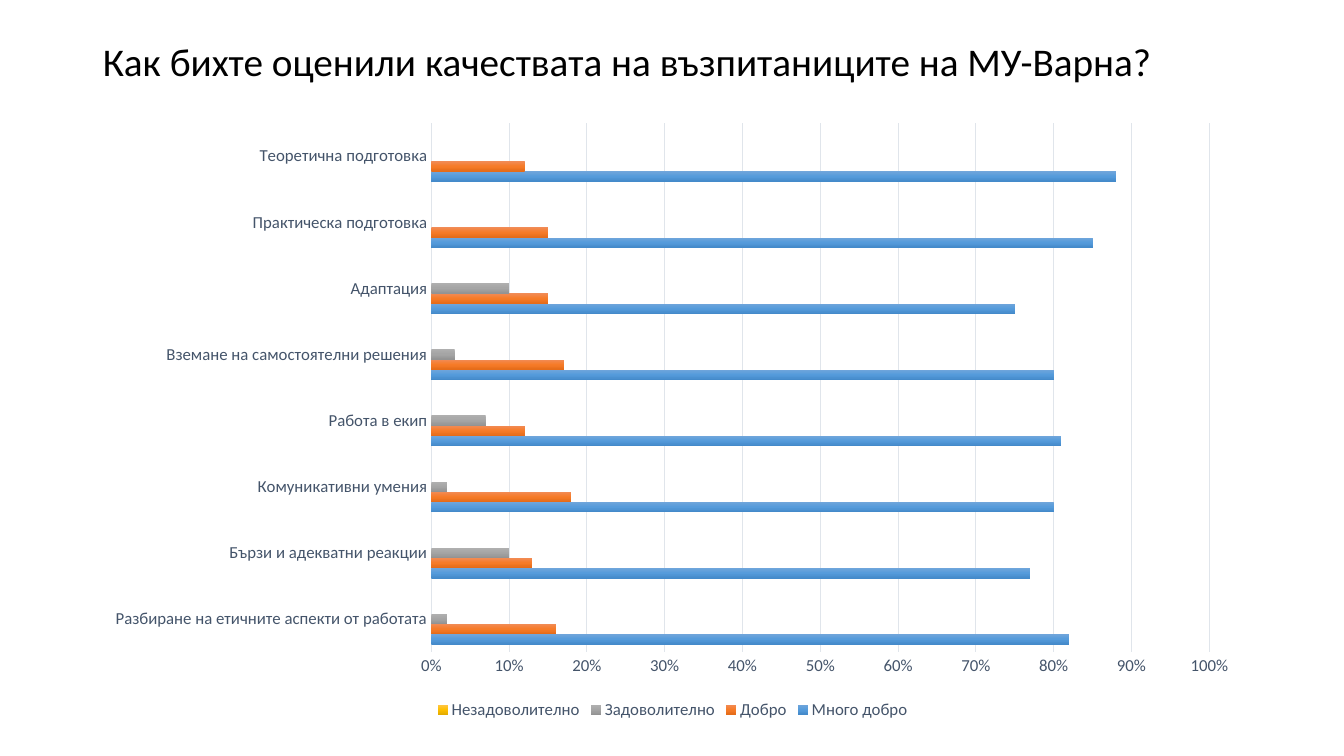
"""Build a slide with a bar chart rating the qualities of graduates."""
from pptx import Presentation
from pptx.chart.data import CategoryChartData
from pptx.dml.color import RGBColor
from pptx.enum.chart import XL_CHART_TYPE, XL_LEGEND_POSITION, XL_TICK_MARK
from pptx.enum.text import MSO_ANCHOR, PP_ALIGN
from pptx.oxml import parse_xml
from pptx.oxml.ns import nsdecls
from pptx.util import Inches, Pt

TITLE = "Как бихте оценили качествата на възпитаниците на МУ-Варна?"
RATINGS = [
    ("Разбиране на етичните аспекти от работата", 0.82, 0.16, 0.02),
    ("Бързи и адекватни реакции", 0.77, 0.13, 0.1),
    ("Комуникативни умения", 0.8, 0.18, 0.02),
    ("Работа в екип", 0.81, 0.12, 0.07),
    ("Вземане на самостоятелни решения", 0.8, 0.17, 0.03),
    ("Адаптация", 0.75, 0.15, 0.1),
    ("Практическа подготовка", 0.85, 0.15, None),
    ("Теоретична подготовка", 0.88, 0.12, None),
]
GRADES = [
    ("Много добро", ("71A6DB", "559BDB", "448ACA")),
    ("Добро", ("F18C57", "F67B28", "E56C19")),
    ("Задоволително", ("AFAFAF", "A5A5A5", "939393")),
    ("Незадоволително", ("FFC64B", "FFC000", "E3AB00")),
    ("", ("6183CB", "3E70CA", "3062BB")),
]
COLORS = {"title": "000000", "label": "44546A", "grid": "E0E5EB"}
FONT = "Calibri"
LEFT, WIDTH = 0.92, 11.5
TITLE_TOP, TITLE_HEIGHT = 0.17, 0.93
CHART_TOP, CHART_HEIGHT = 1.1, 6.08
PLOT = {"x": 4.28 - LEFT, "y": 0.12, "w": 7.72, "h": 5.25}


def set_font(font, size, color):
    for name, value in {"name": FONT, "size": Pt(size), "bold": False}.items():
        setattr(font, name, value)
    font.color.rgb = RGBColor.from_string(COLORS[color])


def set_line(line):
    line.color.rgb = RGBColor.from_string(COLORS["grid"])
    line.width = Pt(0.75)


def add_title(slide):
    sp = slide.shapes.title
    box = {"left": LEFT, "top": TITLE_TOP, "width": WIDTH, "height": TITLE_HEIGHT}
    for name, value in box.items():
        setattr(sp, name, Inches(value))
    tf = sp.text_frame
    tf.text = TITLE
    tf.vertical_anchor = MSO_ANCHOR.MIDDLE
    p = tf.paragraphs[0]
    p.alignment = PP_ALIGN.LEFT
    p.line_spacing = 0.9
    set_font(p.runs[0].font, 28, "title")


def gradient(stops):
    gs = "".join(
        f'<a:gs pos="{i * 50000}"><a:srgbClr val="{c}"/></a:gs>'
        for i, c in enumerate(stops)
    )
    return parse_xml(
        f'<a:gradFill {nsdecls("a")} rotWithShape="1"><a:gsLst>{gs}</a:gsLst>'
        '<a:lin ang="5400000" scaled="0"/></a:gradFill>'
    )


def place_plot(chart):
    modes = '<c:layoutTarget val="inner"/><c:xMode val="edge"/><c:yMode val="edge"/>'
    totals = {"x": WIDTH, "y": CHART_HEIGHT, "w": WIDTH, "h": CHART_HEIGHT}
    parts = "".join(f'<c:{k} val="{v / totals[k]:.3f}"/>' for k, v in PLOT.items())
    layout = parse_xml(
        f'<c:layout {nsdecls("c")}><c:manualLayout>{modes}{parts}'
        "</c:manualLayout></c:layout>"
    )
    chart.element.xpath(".//c:plotArea")[0].insert(0, layout)


def format_axes(chart):
    for axis in (chart.category_axis, chart.value_axis):
        axis.major_tick_mark = axis.minor_tick_mark = XL_TICK_MARK.NONE
        set_font(axis.tick_labels.font, 12, "label")
    set_line(chart.category_axis.format.line)
    axis = chart.value_axis
    for name, value in {"minimum_scale": 0, "maximum_scale": 1, "major_unit": 0.1}.items():
        setattr(axis, name, value)
    axis.format.line.fill.background()
    set_line(axis.major_gridlines.format.line)
    axis.tick_labels.number_format = "0%"
    axis.tick_labels.number_format_is_linked = False


def format_legend(chart):
    chart.has_legend = True
    legend = chart.legend
    legend.position = XL_LEGEND_POSITION.BOTTOM
    legend.include_in_layout = False
    set_font(legend.font, 12, "label")
    entry = parse_xml(
        f'<c:legendEntry {nsdecls("c")}><c:idx val="0"/><c:delete val="1"/></c:legendEntry>'
    )
    chart.element.xpath(".//c:legend/c:legendPos")[0].addnext(entry)


def add_ratings_chart(slide):
    labels, *columns = zip(*RATINGS)
    columns += [(None,) * len(labels)] * (len(GRADES) - len(columns))
    data = CategoryChartData(number_format="0%")
    data.categories = labels
    for (name, _), values in zip(GRADES, columns):
        data.add_series(name, values)
    box = [Inches(v) for v in (LEFT, CHART_TOP, WIDTH, CHART_HEIGHT)]
    chart = slide.shapes.add_chart(XL_CHART_TYPE.BAR_CLUSTERED, *box, data).chart
    chart.has_title = False
    set_font(chart.font, 10, "title")
    plot = chart.plots[0]
    plot.gap_width = 150
    plot.vary_by_categories = False
    for series in plot.series:
        series.format.fill.gradient()
    fills = chart.element.xpath(".//c:ser/c:spPr/a:gradFill")
    for fill, (_, stops) in zip(fills, GRADES):
        fill.getparent().replace(fill, gradient(stops))
    format_axes(chart)
    format_legend(chart)
    place_plot(chart)


def main():
    prs = Presentation()
    prs.slide_width, prs.slide_height = Inches(13.33), Inches(7.5)
    s = prs.slides.add_slide(prs.slide_layouts[5])
    add_title(s)
    add_ratings_chart(s)
    prs.save("out.pptx")


if __name__ == "__main__":
    main()
